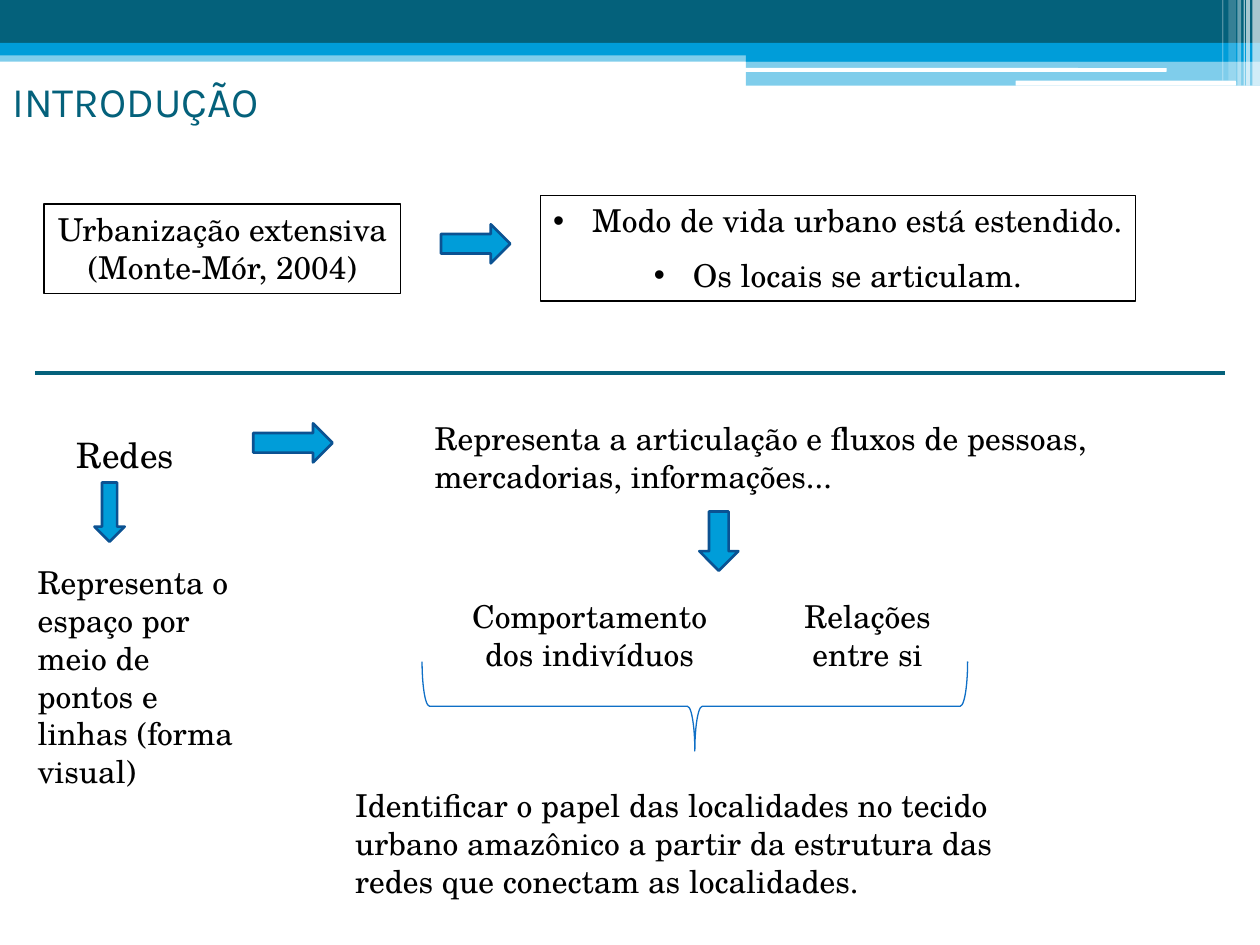
from lxml import etree
from pptx import Presentation
from pptx.dml.color import RGBColor
from pptx.enum import shapes, text
from pptx.oxml.ns import qn
from pptx.util import Inches, Pt

COLORS = {"teal": "04617B", "blue": "009DD9", "edge": "0B5292",
          "brace": "0F6FC6", "white": "FFFFFF", "black": "000000"}
SERIF, SANS = "TeX Gyre Schola", "Karla"
KIND, ALIGN = shapes.MSO_SHAPE, text.PP_ALIGN

# Header bands: left, top, width, height, colour, opacity in percent
BANDS = [
    (0, 0.4, 10, 0.09, "blue", 50),
    (0, 0, 10, 0.34, "teal", 100),
    (0, 0.34, 10, 0.1, "blue", 100),
    (5.92, 0.39, 4.08, 0.1, "blue", 100),
    (5.92, 0.48, 4.08, 0.2, "blue", 50),
]
ROUNDED_STRIPES = [(5.91, 0.54, 3.35, 0.03), (8.06, 0.64, 1.75, 0.04)]
# Vertical stripes: left, width, height, opacity
STRIPES = [(9.94, 0.06, 0.68, 65), (9.89, 0.03, 0.68, 65),
           (9.87, 0.01, 0.68, 60), (9.82, 0.03, 0.68, 40),
           (9.75, 0.06, 0.64, 20), (9.7, 0.01, 0.64, 30)]

# Framed boxes: position, paragraphs, bulleted
FRAMES = [
    ((0.35, 1.62, 2.83, 0.71), ["Urbanização extensiva (Monte-Mór, 2004)"], False),
    ((4.29, 1.55, 4.72, 0.84),
     ["Modo de vida urbano está estendido.", "Os locais se articulam."], True),
]
# Plain texts: position, wording, size, alignment
TEXTS = [
    ((0.51, 3.39, 1.02, 0.44), "Redes", 20, ALIGN.LEFT),
    ((0.2, 4.42, 1.81, 1.62),
     "Representa o espaço por meio de pontos e linhas (forma visual)", 18, ALIGN.LEFT),
    ((3.35, 3.28, 5.98, 0.71),
     "Representa a articulação e fluxos de pessoas, mercadorias, informações...",
     18, ALIGN.LEFT),
    ((3.5, 4.69, 2.36, 0.71), "Comportamento dos indivíduos", 18, ALIGN.CENTER),
    ((6.1, 4.69, 1.57, 0.71), "Relações entre si", 18, ALIGN.CENTER),
    ((2.72, 6.19, 5.91, 1.01),
     "Identificar o papel das localidades no tecido urbano amazônico a partir da "
     "estrutura das redes que conectam as localidades.", 18, ALIGN.LEFT),
]
ARROWS = [
    (KIND.RIGHT_ARROW, (3.5, 1.78, 0.55, 0.31)),
    (KIND.RIGHT_ARROW, (2.01, 3.36, 0.63, 0.31)),
    (KIND.DOWN_ARROW, (0.75, 3.83, 0.24, 0.47)),
    (KIND.DOWN_ARROW, (5.55, 4.06, 0.31, 0.47)),
]


def rgb(name):
    return RGBColor.from_string(COLORS[name])


def add_shape(s, kind, box, fill=None, line=None, width=0.75, opacity=100):
    sp = s.shapes.add_shape(kind, *map(Inches, box))
    sp.shadow.inherit = False
    if fill:
        sp.fill.solid()
        sp.fill.fore_color.rgb = rgb(fill)
        if opacity < 100:
            color = sp.fill._xPr.find(qn("a:solidFill"))[0]
            etree.SubElement(color, qn("a:alpha"), val=str(opacity * 1000))
    else:
        sp.fill.background()
    if line:
        sp.line.color.rgb = rgb(line)
        sp.line.width = Pt(width)
    else:
        sp.line.fill.background()
    return sp


def add_bullet(p):
    pPr = p._p.get_or_add_pPr()
    pPr.set("marL", str(Inches(0.31)))
    pPr.set("indent", str(-Inches(0.31)))
    etree.SubElement(pPr, qn("a:buFont"), typeface="Arial")
    etree.SubElement(pPr, qn("a:buChar"), char="•")


def add_text(s, box, lines, size=18, align=ALIGN.LEFT, font=SERIF,
             color="black", bullets=False):
    sp = s.shapes.add_textbox(*map(Inches, box))
    tf = sp.text_frame
    tf.word_wrap = True
    tf.text = "\n".join(lines)
    for i, p in enumerate(tf.paragraphs):
        p.alignment = align
        if i:
            p.space_before = Pt(9.5)
        if bullets:
            add_bullet(p)
        for r in p.runs:
            r.font.size = Pt(size)
            r.font.name = font
            r.font.color.rgb = rgb(color)
    return sp


prs = Presentation()
prs.slide_width, prs.slide_height = Inches(10), Inches(7.5)
s = prs.slides.add_slide(prs.slide_layouts[6])

# Header decoration
for *box, color, opacity in BANDS:
    add_shape(s, KIND.RECTANGLE, box, color, opacity=opacity)
for box in ROUNDED_STRIPES:
    add_shape(s, KIND.ROUNDED_RECTANGLE, box, "white")
for left, width, height, opacity in STRIPES:
    add_shape(s, KIND.RECTANGLE, (left, 0, width, height), "white", opacity=opacity)

# Title
title = add_text(s, (0, 0.52, 2.17, 0.55), ["INTRODUÇÃO"], 24, font=SANS, color="teal")
title.text_frame.vertical_anchor = text.MSO_ANCHOR.MIDDLE

# Framed boxes and plain texts
for box, lines, bullets in FRAMES:
    frame = add_text(s, box, lines, align=ALIGN.CENTER, bullets=bullets)
    frame.line.color.rgb = rgb("black")
    frame.line.width = Pt(0.75)
for box, wording, size, align in TEXTS:
    add_text(s, box, [wording], size, align)

# Arrows and brace
for kind, box in ARROWS:
    add_shape(s, kind, box, "blue", "edge", 1.5)
brace = add_shape(s, KIND.LEFT_BRACE, (5.16, 3.44, 0.71, 4.33), line="brace")
brace.rotation = 270

# Divider
divider = s.shapes.add_connector(shapes.MSO_CONNECTOR.STRAIGHT, Inches(0.28),
                                 Inches(2.96), Inches(9.72), Inches(2.96))
divider.line.color.rgb = rgb("teal")
divider.line.width = Pt(2)
etree.SubElement(divider._element.spPr, qn("a:effectLst"))

prs.save("out.pptx")
